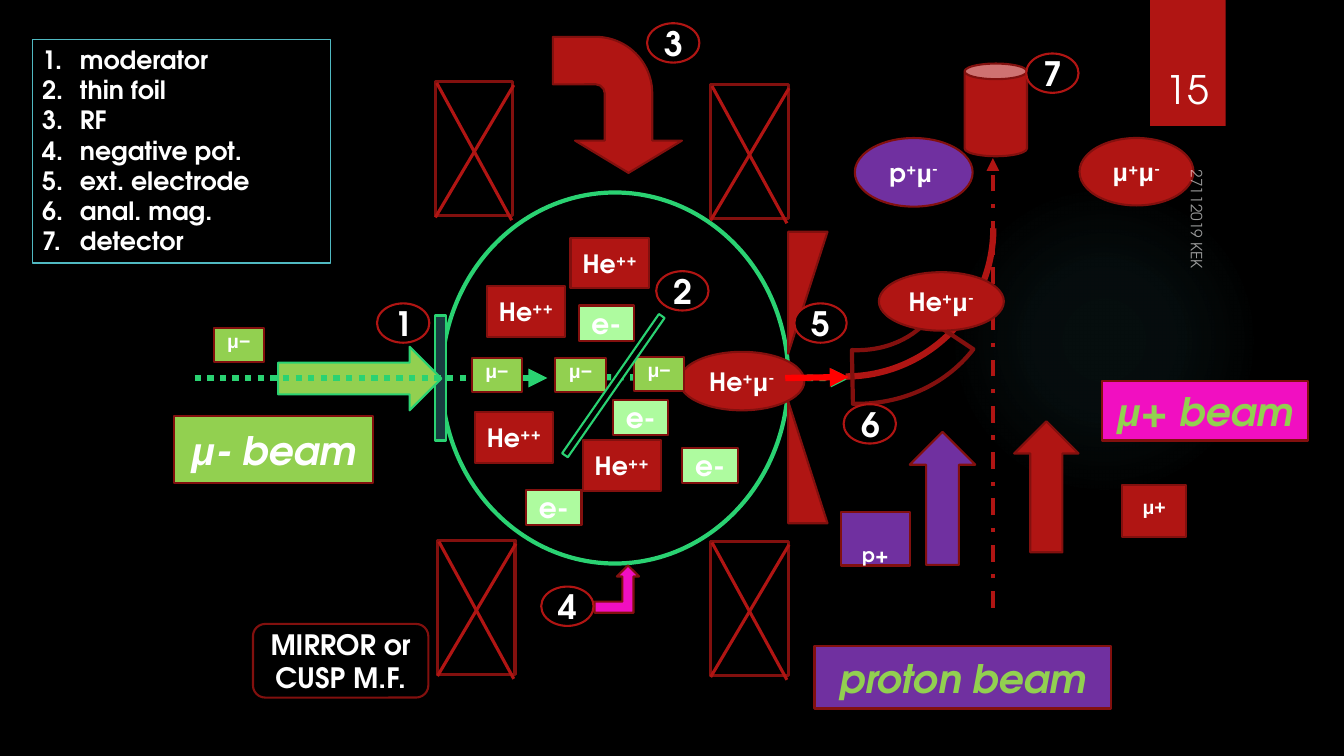
from lxml import etree
from pptx import Presentation
from pptx.dml.color import RGBColor
from pptx.enum.dml import MSO_LINE
from pptx.enum.shapes import MSO_CONNECTOR, MSO_SHAPE
from pptx.enum.text import MSO_ANCHOR, PP_ALIGN
from pptx.oxml.ns import qn
from pptx.util import Pt

RECT, OVAL, ARROW = MSO_SHAPE.RECTANGLE, MSO_SHAPE.OVAL, MSO_SHAPE.RIGHT_ARROW
WEDGE, ROUND, CAN = MSO_SHAPE.RIGHT_TRIANGLE, MSO_SHAPE.ROUNDED_RECTANGLE, MSO_SHAPE.CAN
ARC, SECTOR, BAR = MSO_SHAPE.ARC, MSO_SHAPE.BLOCK_ARC, MSO_SHAPE.MATH_MINUS
BENT, ELBOW = MSO_SHAPE.BENT_ARROW, MSO_SHAPE.BENT_UP_ARROW
DOTS, DASHES = MSO_LINE.ROUND_DOT, MSO_LINE.DASH_DOT
STRAIGHT = MSO_CONNECTOR.STRAIGHT
TOP, MIDDLE, BOTTOM = MSO_ANCHOR.TOP, MSO_ANCHOR.MIDDLE, MSO_ANCHOR.BOTTOM
LEFT, CENTER = PP_ALIGN.LEFT, PP_ALIGN.CENTER

HEX = {
    "black": "000000", "white": "FFFFFF", "red": "B01513", "dark": "82100E",
    "bright": "FF0000", "green": "2AD272", "lime": "92D050", "mint": "AEFB9F",
    "slate": "173D40", "teal": "50B9C1", "violet": "7030A0", "pink": "F10FC1",
}
FONT, GREEK = "TeX Gyre Adventor", "Arial"
PARTS = ["moderator", "thin foil", "RF", "negative pot.", "ext. electrode",
         "anal. mag.", "detector"]
HELIUM = [("He", False), ("++", True)]
MUON = [("μ−", True)]
ATOM = [("+", True), ("μ", False), ("-", True)]


def rgb(name):
    return RGBColor.from_string(HEX[name])


def points(values):
    return [Pt(v) for v in values]


def add_shape(slide, kind, box, fill=None, line="dark", width=1.5, turn=0, adj=()):
    shape = slide.shapes.add_shape(kind, *points(box))
    shape.shadow.inherit = False
    shape.rotation = turn
    for i, value in enumerate(adj):
        shape.adjustments[i] = value
    if fill:
        shape.fill.solid()
        shape.fill.fore_color.rgb = rgb(fill)
    else:
        shape.fill.background()
    if line:
        shape.line.color.rgb = rgb(line)
        shape.line.width = Pt(width)
    else:
        shape.line.fill.background()
    return shape


def add_line(slide, start, end, color, width, dash=None, head=True):
    line = slide.shapes.add_connector(STRAIGHT, *points(start + end))
    line.line.color.rgb = rgb(color)
    line.line.width = Pt(width)
    if dash:
        line.line.dash_style = dash
    props = line._element.spPr
    if head:
        etree.SubElement(props.find(qn("a:ln")), qn("a:tailEnd"), type="triangle")
    etree.SubElement(props, qn("a:effectLst"))


def style(run, size, color="white", bold=True, italic=False):
    font = run.font
    font.name = GREEK if run.text.startswith("μ") else FONT
    font.size = Pt(size)
    font.bold = bold
    font.italic = italic
    font.color.rgb = rgb(color)


def write(shape, parts, size=18, anchor=MIDDLE, **look):
    """Fill a shape with centred (text, raised) runs."""
    frame = shape.text_frame
    frame.word_wrap = True
    frame.vertical_anchor = anchor
    para = frame.paragraphs[0]
    para.alignment = CENTER
    for text, raised in parts:
        run = para.add_run()
        run.text = text
        style(run, size, **look)
        if raised:
            run.font._element.set("baseline", "30000")


def add_box(slide, kind, box, fill, parts, size=18, line="dark", **look):
    shape = add_shape(slide, kind, box, fill, line)
    write(shape, parts, size, **look)
    return shape


def add_note(slide, box, text, size, align, turn=0):
    note = slide.shapes.add_textbox(*points(box))
    note.rotation = turn
    frame = note.text_frame
    frame.word_wrap = True
    frame.vertical_anchor = BOTTOM
    para = frame.paragraphs[0]
    para.text = text
    para.alignment = align
    style(para.runs[0], size, bold=False)
    return para.runs[0]


def add_glow(slide):
    glow = add_shape(slide, OVAL, (677.5, 131.8, 221.8, 221.8), line=None)
    grad = etree.Element(qn("a:gradFill"))
    stops = etree.SubElement(grad, qn("a:gsLst"))
    for place, alpha in (0, 7), (36, 6), (69, 0):
        stop = etree.SubElement(stops, qn("a:gs"), pos=str(place * 1000))
        color = etree.SubElement(stop, qn("a:srgbClr"), val=HEX["teal"])
        etree.SubElement(color, qn("a:alpha"), val=str(alpha * 1000))
    shade = etree.SubElement(grad, qn("a:path"), path="circle")
    etree.SubElement(shade, qn("a:fillToRect"), l="50000", t="50000", r="50000", b="50000")
    props = glow._element.spPr
    props.replace(props.find(qn("a:noFill")), grad)


def add_magnet(slide, x, y):
    add_shape(slide, RECT, (x, y, 55.4, 95.8), width=2.25)
    add_line(slide, (x + 1, y + 1), (x + 54.5, y + 99), "red", 2.25, head=False)
    add_line(slide, (x + 56, y + 2.5), (x, y + 97), "red", 2.25, head=False)


def add_legend(slide):
    legend = add_shape(slide, RECT, (23, 28.1, 213.1, 159.8), line="teal", width=0.75)
    frame = legend.text_frame
    frame.word_wrap = True
    frame.vertical_anchor = TOP
    frame.text = "\n".join(PARTS)
    for para in frame.paragraphs:
        para.alignment = LEFT
        props = para._p.get_or_add_pPr()
        props.set("marL", str(Pt(27)))
        props.set("indent", str(Pt(-27)))
        etree.SubElement(props, qn("a:buFont"), typeface="+mj-lt")
        etree.SubElement(props, qn("a:buAutoNum"), type="arabicPeriod")
        style(para.runs[0], 18)


def add_trap(slide):
    add_shape(slide, OVAL, (315.4, 137.5, 247.7, 265), line="green", width=3)
    add_shape(slide, RECT, (311, 225.4, 7.9, 89.3), "slate", "green")
    add_shape(slide, ARROW, (198.7, 247.7, 116.6, 45.4), "lime", "green")
    add_line(slide, (139, 270), (391, 270), "green", 4.5, DOTS)
    add_line(slide, (432, 269.5), (607, 270), "green", 4.5, DOTS)
    upper = add_shape(slide, WEDGE, (563, 165.6, 28.1, 87.1), "red")
    upper._element.spPr.find(qn("a:xfrm")).set("flipV", "1")
    add_shape(slide, WEDGE, (563, 286.6, 28.1, 87.1), "red")
    add_shape(slide, ARC, (498.2, 57.6, 211.7, 211), None, "red", 4.5, 90, (162, 0))
    add_shape(slide, SECTOR, (510.5, 84.2, 193.7, 213.8), width=3, turn=103,
              adj=(174.351, 207.539, 0.198))
    add_line(slide, (709.2, 434.2), (709.2, 113), "red", 3, DASHES)
    for x, y in (311, 58.3), (507.6, 386.6), (312.5, 385.9), (507.6, 60.5):
        add_magnet(slide, x, y)


def add_ions(slide):
    for x, y in (347.8, 204.5), (416.2, 314.6), (339.1, 294.5), (407.5, 169.9):
        add_box(slide, RECT, (x, y, 56, 36), "red", HELIUM)
    for x, y in (485.3, 251.3), (627.8, 194.4):
        add_box(slide, OVAL, (x, y, 89.3, 41.8), "red", [("He", False)] + ATOM)
    add_box(slide, OVAL, (610.6, 98.6, 84.2, 49), "violet", [("p", False)] + ATOM)
    add_box(slide, OVAL, (771.1, 98.6, 81.4, 48.2), "red", [("μ", False)] + ATOM)
    for x, y in (152.6, 234), (337, 255.6), (396.7, 255.6), (452.9, 254.9):
        add_box(slide, RECT, (x, y, 36, 24.5), "lime", MUON, 24)
    for x, y in (375.8, 349.9), (437.8, 285.8), (487.4, 319.7), (413.3, 218.2):
        add_box(slide, RECT, (x, y, 39.6, 25.2), "mint", [("e-", False)], 20)
    add_box(slide, RECT, (801.4, 346.3, 46, 37.4), "red", [("μ+", True)], 24)
    proton = add_box(slide, RECT, (600.5, 365.8, 49.7, 38.2), "violet",
                     [("p+", True)], 24, anchor=TOP)
    proton.text_frame.margin_top = Pt(19)
    proton.text_frame.margin_bottom = 0


def add_beams(slide):
    add_shape(slide, ARROW, (625.7, 332.6, 95, 46.8), "violet", turn=270)
    add_shape(slide, ARROW, (700.6, 324.7, 93.6, 46), "red", turn=270)
    for box, fill, ink, names in (
        ((581.8, 461.5, 211.7, 44.6), "violet", "lime", ["proton beam"]),
        ((124.6, 297.4, 141.8, 47.5), "lime", "white", ["μ", "- beam"]),
        ((787, 272.2, 147.6, 42.5), "pink", "lime", ["μ", "+ beam"]),
    ):
        parts = [(name, False) for name in names]
        add_box(slide, RECT, box, fill, parts, 28, color=ink, italic=True)


def add_gear(slide):
    add_shape(slide, BENT, (392.4, 28.8, 97.2, 92.2), "red", turn=90,
              adj=(0.368, 0.414, 0.25, 0.438))
    add_box(slide, ROUND, (180.7, 445.7, 125.3, 52.6), "black",
            [("MIRROR or CUSP M.F.", False)], 20)
    add_line(slide, (560.9, 270), (606.2, 269.3), "bright", 4.5)
    add_shape(slide, BAR, (355.7, 265, 164.9, 20.9), "black", "green", turn=304.8)
    add_shape(slide, ELBOW, (424.8, 403.9, 31.7, 33.8), "pink")
    add_shape(slide, CAN, (689, 45.4, 44.6, 66.2), "red")
    spots = [(269.3, 216.7), (468.7, 193.7), (462.2, 16.6), (386.6, 419),
             (567.4, 216.7), (602.6, 288.7), (733, 38.2)]
    for number, (x, y) in enumerate(spots, 1):
        add_box(slide, OVAL, (x, y, 37.4, 28.1), "black", [(str(number), False)],
                24, line="red")


def main():
    deck = Presentation()
    deck.slide_width, deck.slide_height = Pt(960), Pt(540)
    slide = deck.slides.add_slide(deck.slide_layouts[6])
    slide.background.fill.solid()
    slide.background.fill.fore_color.rgb = rgb("black")
    add_glow(slide)
    add_shape(slide, RECT, (821.5, 0, 54, 90), "red", None)
    add_trap(slide)
    add_ions(slide)
    add_beams(slide)
    add_gear(slide)
    date = add_note(slide, (704.9, 254.2, 303.8, 23.8), "27112019 KEK", 11, LEFT, 90)
    ink = date.font._element.find(".//" + qn("a:srgbClr"))
    etree.SubElement(ink, qn("a:alpha"), val="60000")
    add_note(slide, (815, 23, 66.2, 60.5), "15", 28, CENTER)
    add_legend(slide)
    deck.save("out.pptx")


if __name__ == "__main__":
    main()
